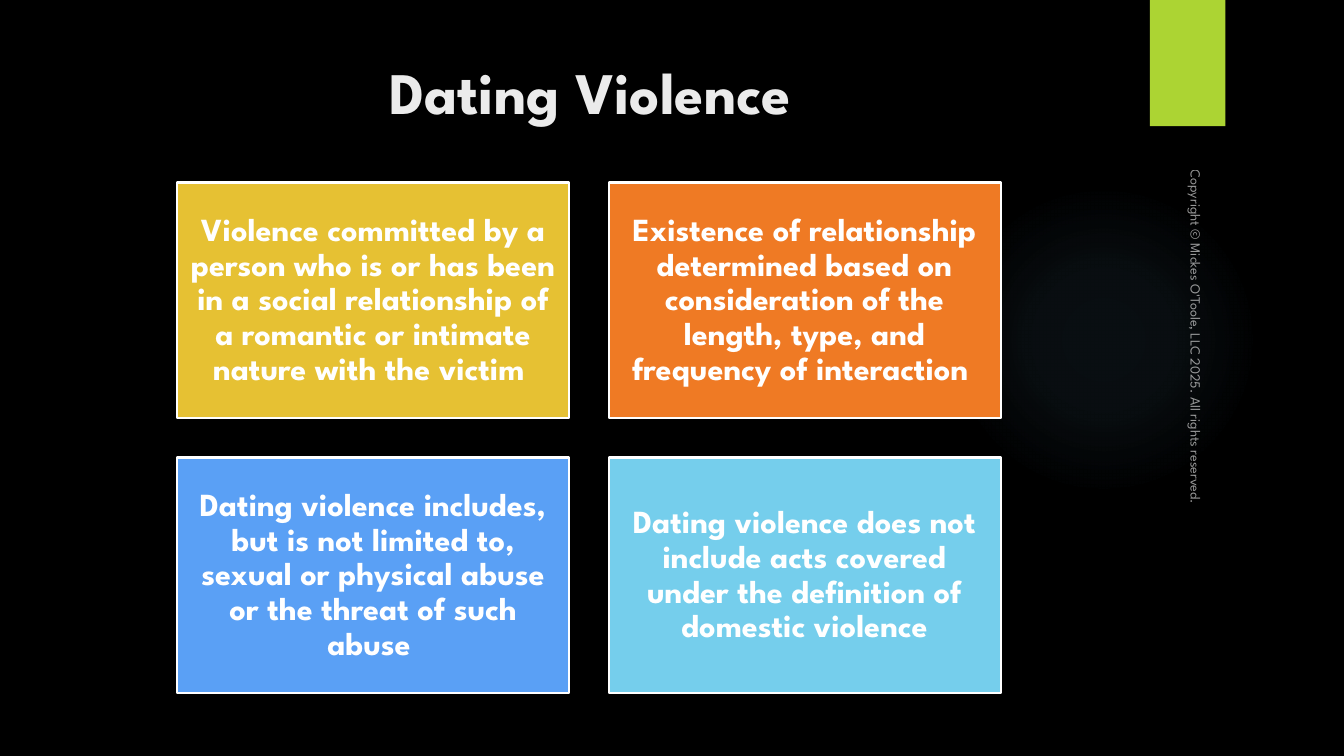
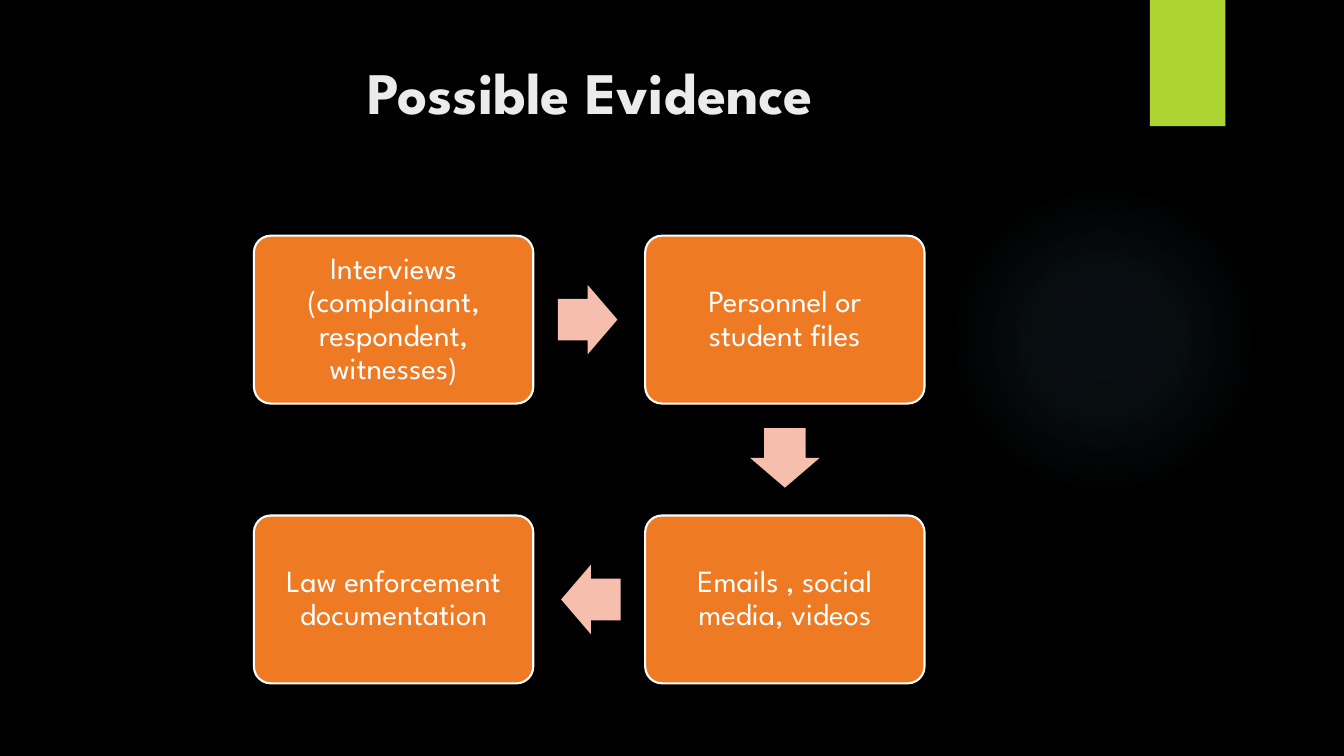
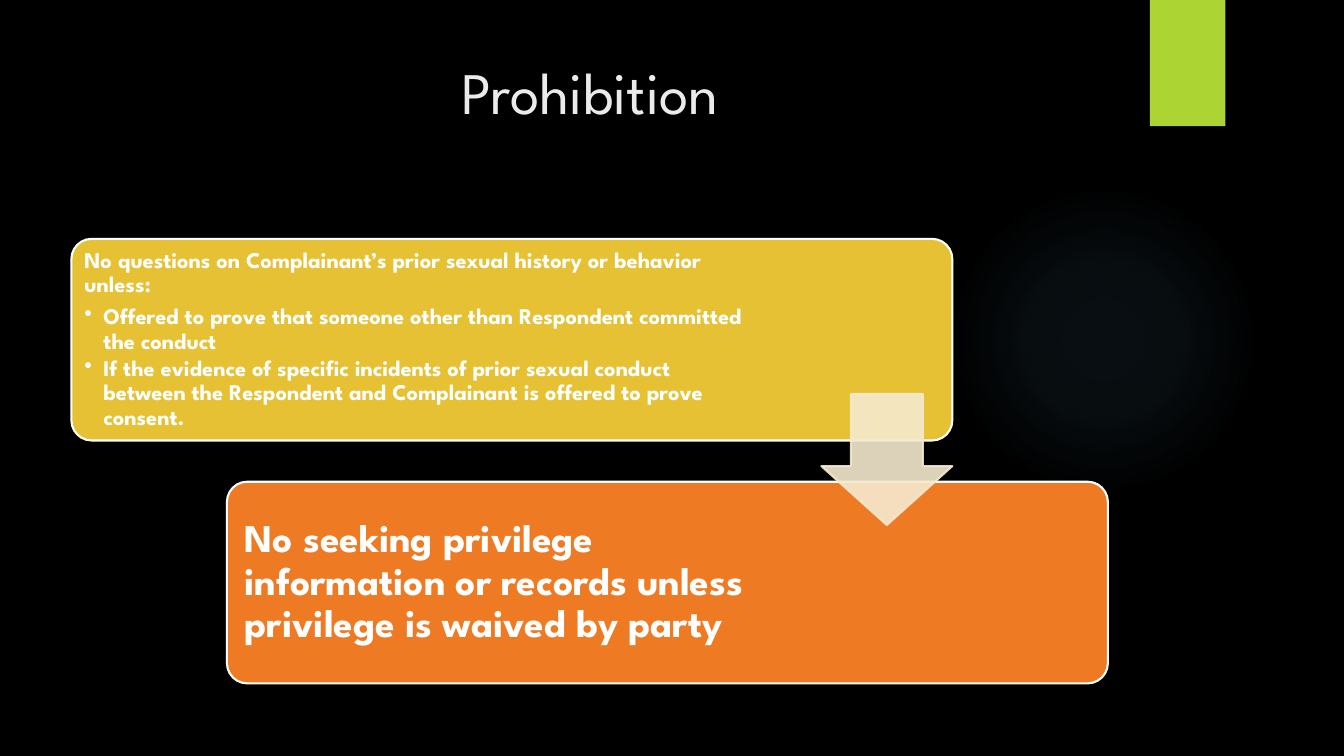
from pptx import Presentation
from pptx.dml.color import RGBColor
from pptx.enum.shapes import MSO_SHAPE
from pptx.enum.text import MSO_ANCHOR, MSO_AUTO_SIZE, PP_ALIGN
from pptx.oxml import parse_xml
from pptx.oxml.ns import qn
from pptx.util import Cm, Pt
from lxml import etree

RECT, ROUND, OVAL = MSO_SHAPE.RECTANGLE, MSO_SHAPE.ROUNDED_RECTANGLE, MSO_SHAPE.OVAL
RIGHT_ARROW, DOWN_ARROW = MSO_SHAPE.RIGHT_ARROW, MSO_SHAPE.DOWN_ARROW
LEFT, CENTER = PP_ALIGN.LEFT, PP_ALIGN.CENTER
TOP, MIDDLE, BOTTOM = MSO_ANCHOR.TOP, MSO_ANCHOR.MIDDLE, MSO_ANCHOR.BOTTOM
TITLE_ONLY = 5
FONT = "League Spartan"
COLORS = {
    "black": "000000", "white": "FFFFFF", "title": "EBEBEB", "band": "ACD433",
    "glow": "7AC4F0", "gold": "E6C133", "orange": "EF7A24", "blue": "5AA0F5",
    "sky": "75CEEC", "pink": "F6BEAC", "cream": "F5E9CE",
}
GLOW_STOPS = [(0, 7), (36, 6), (69, 0)]
A_NS = "http://schemas.openxmlformats.org/drawingml/2006/main"


def rgb(name):
    return RGBColor.from_string(COLORS[name])


def set_alpha(fill, percent):
    clr = next(fill._xPr.iter(qn("a:srgbClr")))
    etree.SubElement(clr, qn("a:alpha"), val=str(percent * 1000))


class Deck:
    def __init__(self):
        self.prs = Presentation()
        self.prs.slide_width, self.prs.slide_height = Cm(33.87), Cm(19.05)
        bg = self.prs.slide_master.background.fill
        bg.solid()
        bg.fore_color.rgb = rgb("black")
        self.s = None

    def new_slide(self, title, height=3.89, bold=True):
        self.s = self.prs.slides.add_slide(self.prs.slide_layouts[TITLE_ONLY])
        self.glow()
        self.shape(RECT, 28.98, 0, 1.9, 3.18, "band")
        sp = self.s.shapes.title
        sp.left, sp.top, sp.width, sp.height = Cm(1.8), Cm(1.27), Cm(26.14), Cm(height)
        tf = sp.text_frame
        tf.auto_size = MSO_AUTO_SIZE.NONE
        tf.vertical_anchor = TOP
        p = tf.paragraphs[0]
        p.alignment = CENTER
        p.line_spacing = 1.0
        self.run(p, title, 42, bold, "title")

    def glow(self):
        sp = self.shape(OVAL, 23.9, 4.65, 7.82, 7.82)
        stops = "".join(
            f'<a:gs pos="{pos * 1000}"><a:srgbClr val="{COLORS["glow"]}">'
            f'<a:alpha val="{alpha * 1000}"/></a:srgbClr></a:gs>'
            for pos, alpha in GLOW_STOPS)
        grad = parse_xml(
            f'<a:gradFill xmlns:a="{A_NS}"><a:gsLst>{stops}</a:gsLst><a:path path="circle">'
            '<a:fillToRect l="50000" t="50000" r="50000" b="50000"/></a:path></a:gradFill>')
        sp_pr = sp._element.spPr
        sp_pr.replace(sp_pr.find(qn("a:noFill")), grad)

    def shape(self, kind, x, y, w, h, fill=None, line=None, adj=(), alpha=None):
        sp = self.s.shapes.add_shape(kind, Cm(x), Cm(y), Cm(w), Cm(h))
        sp.shadow.inherit = False
        for i, value in enumerate(adj):
            sp.adjustments[i] = value
        if fill:
            sp.fill.solid()
            sp.fill.fore_color.rgb = rgb(fill)
        else:
            sp.fill.background()
        if line:
            sp.line.color.rgb = rgb(line)
            sp.line.width = Pt(1.5)
        else:
            sp.line.fill.background()
        if alpha:
            set_alpha(sp.fill, alpha)
            if line:
                set_alpha(sp.line.fill, alpha)
        return sp

    def run(self, p, text, size, bold=False, color="white"):
        r = p.add_run()
        r.text = text
        font = r.font
        font.name, font.size, font.bold = FONT, Pt(size), bold
        font.color.rgb = rgb(color)
        return r

    def card(self, kind, x, y, w, h, fill, text, size, bold, inset,
             right=None, align=CENTER, bullets=()):
        adj = (0.1,) if kind == ROUND else ()
        tf = self.shape(kind, x, y, w, h, fill, "white", adj).text_frame
        tf.word_wrap = True
        tf.vertical_anchor = MIDDLE
        tf.margin_left = tf.margin_top = tf.margin_bottom = Cm(inset)
        tf.margin_right = Cm(right or inset)
        for i, line in enumerate([text, *bullets]):
            p = tf.add_paragraph() if i else tf.paragraphs[0]
            p.alignment = align
            p.line_spacing = 0.9
            p.space_after = Pt(size * (0.15 if i else 0.35))
            if i:
                self.bullet(p)
            self.run(p, line, size, bold)

    def bullet(self, p):
        p.level = 1
        ppr = p._p.get_or_add_pPr()
        ppr.set("marL", str(Cm(0.48)))
        ppr.set("indent", str(-Cm(0.48)))
        etree.SubElement(ppr, qn("a:buChar"), char="•")

    def arrow(self, cx, cy, angle):
        w, h = 1.5, 1.75
        sp = self.shape(RIGHT_ARROW, cx - w / 2, cy - h / 2, w, h, "pink", adj=(0.6, 0.5))
        sp.rotation = angle

    def copyright(self, text):
        sp = self.s.shapes.add_textbox(Cm(24.87), Cm(8.97), Cm(10.72), Cm(0.84))
        sp.rotation = 90
        tf = sp.text_frame
        tf.word_wrap = True
        tf.vertical_anchor = BOTTOM
        p = tf.paragraphs[0]
        p.space_after = Pt(6)
        set_alpha(self.run(p, text, 10).font.fill, 60)


def dating_violence(deck):
    deck.new_slide("Dating Violence", 2.77)
    deck.copyright("Copyright © Mickes O'Toole, LLC 2025. All rights reserved.")
    cards = [
        ("gold", "Violence committed by a person who is or has been in a social "
                 "relationship of a romantic or intimate nature with the victim "),
        ("orange", "Existence of relationship determined based on consideration of "
                   "the length, type, and frequency of interaction "),
        ("blue", "Dating violence includes, but is not limited to, sexual or physical "
                 "abuse or the threat of such abuse "),
        ("sky", "Dating violence does not include acts covered under the definition "
                "of domestic violence"),
    ]
    w, h, gap = 9.88, 5.94, 0.99
    for i, (fill, text) in enumerate(cards):
        row, col = divmod(i, 2)
        deck.card(RECT, 4.47 + col * (w + gap), 4.6 + row * (h + gap), w, h,
                  fill, text, 23, True, 0.25)


def possible_evidence(deck):
    deck.new_slide("Possible Evidence")
    steps = [
        (0, 0, "Interviews (complainant, respondent, witnesses)"),
        (1, 0, "Personnel or student files"),
        (1, 1, "Emails , social media, videos"),
        (0, 1, "Law enforcement documentation"),
    ]
    w, h, gap, lag = 7.04, 4.23, 2.82, 0.04
    centers = []
    for col, row, text in steps:
        x, y = 6.4 + col * (w + gap), 5.94 + row * (h + gap)
        deck.card(ROUND, x, y, w, h, "orange", text, 22, False, 0.23)
        centers.append((x + w / 2, y + h / 2))
    for i, (dx, dy) in enumerate([(1, 0), (0, 1), (-1, 0)]):
        (x1, y1), (x2, y2) = centers[i:i + 2]
        deck.arrow((x1 + x2) / 2 - lag * dx, (y1 + y2) / 2 - lag * dy, 90 * i)


def prohibition(deck):
    deck.new_slide("Prohibition", bold=False)
    x, w, h, side = 1.8, 22.2, 5.08, 3.3
    deck.card(ROUND, x, 6.02, w, h, "gold",
              "No questions on Complainant’s prior sexual history or behavior unless:",
              16, True, 0.18, 5.11, LEFT,
              ["Offered to prove that someone other than Respondent committed the conduct",
               "If the evidence of specific incidents of prior sexual conduct between the "
               "Respondent and Complainant is offered to prove consent."])
    deck.card(ROUND, 5.72, 12.14, w, h, "orange",
              "No seeking privilege information or records unless privilege is waived by party",
              28, True, 0.3, 7.52, LEFT)
    deck.shape(DOWN_ARROW, x + w - side, 9.93, side, side, "cream", "cream",
               (0.55, 0.45), 90)


def main():
    deck = Deck()
    dating_violence(deck)
    possible_evidence(deck)
    prohibition(deck)
    deck.prs.save("out.pptx")


if __name__ == "__main__":
    main()
